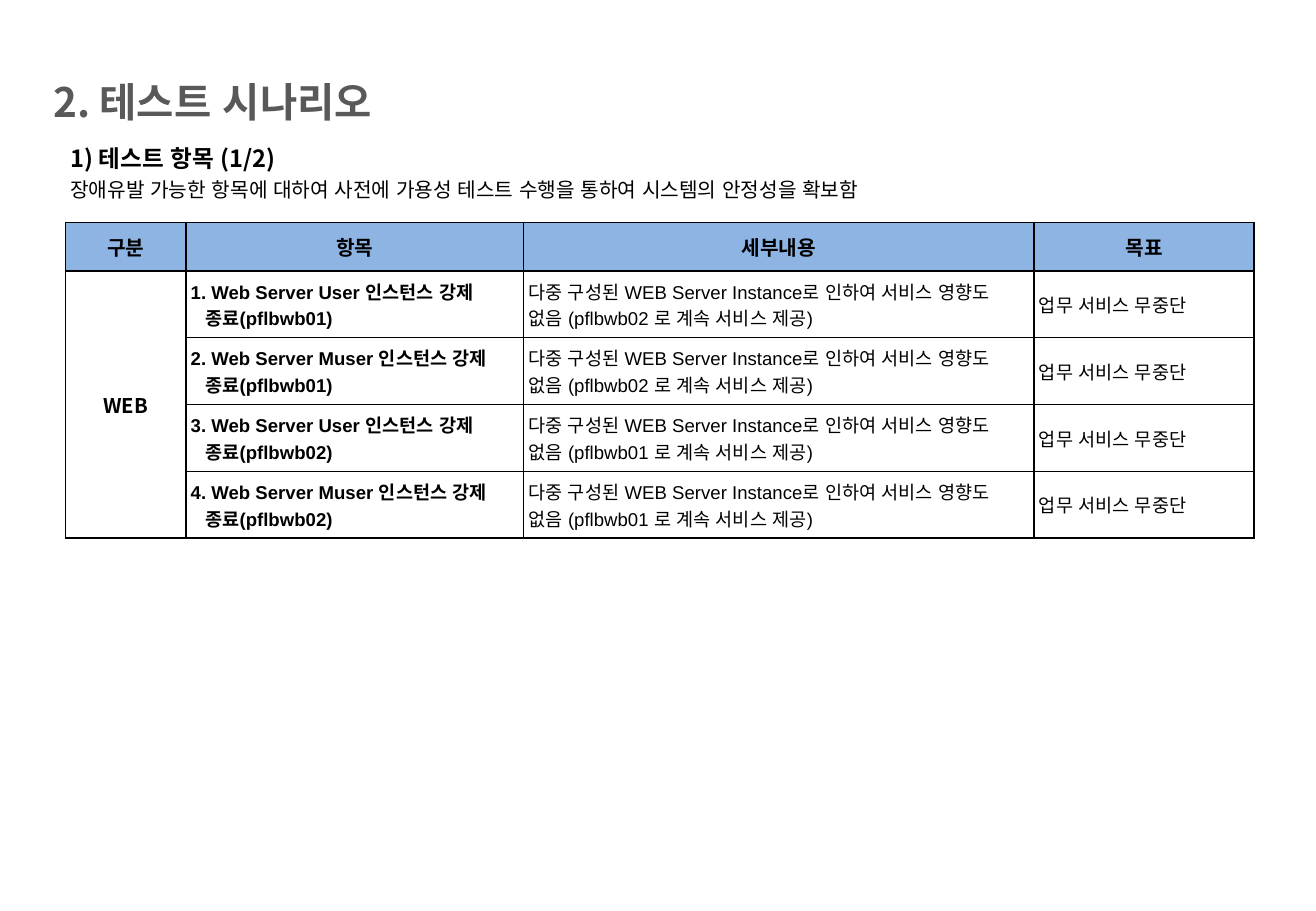
from pptx import Presentation
from pptx.dml.color import RGBColor
from pptx.enum.text import MSO_ANCHOR, MSO_AUTO_SIZE, PP_ALIGN
from pptx.oxml.ns import qn
from pptx.util import Inches, Pt
from lxml import etree

LEFT, CENTER = PP_ALIGN.LEFT, PP_ALIGN.CENTER
TOP, MIDDLE = MSO_ANCHOR.TOP, MSO_ANCHOR.MIDDLE
NO_AUTOFIT = MSO_AUTO_SIZE.NONE

TITLE = "2. 테스트 시나리오"
SUBTITLE = "1) 테스트 항목 (1/2)"
SUMMARY = "장애유발 가능한 항목에 대하여 사전에 가용성 테스트 수행을 통하여 시스템의 안정성을 확보함"
HEADERS = ["구분", "항목", "세부내용", "목표"]
CATEGORY = "WEB"
GOAL = "업무 서비스 무중단"
# (server account, stopped instance, instance that keeps serving)
TESTS = [
    ("User", "pflbwb01", "pflbwb02"),
    ("Muser", "pflbwb01", "pflbwb02"),
    ("User", "pflbwb02", "pflbwb01"),
    ("Muser", "pflbwb02", "pflbwb01"),
]

KOREAN, LATIN = "Noto Sans CJK KR", "Arial"
THEME = {
    "black": "000000", "white": "FFFFFF", "header": "8EB4E3",
    "title": {"size": 24, "bold": True, "name": KOREAN, "color": "595959"},
    "subtitle": {"size": 14, "bold": True, "name": KOREAN, "color": "000000"},
    "summary": {"size": 12, "bold": False, "name": KOREAN, "color": "000000"},
    "heading": {"size": 12, "bold": True, "name": KOREAN, "color": "000000"},
    "item": {"size": 11, "bold": True, "name": LATIN, "color": "000000"},
    "detail": {"size": 11, "bold": False, "name": LATIN, "color": "000000"},
}

COLUMN_WIDTHS = [0.99, 2.78, 4.2, 1.81]
HEADER_HEIGHT, TEST_HEIGHT = 0.4, 0.55
HANGING = 0.12


def write(paragraph, text, style, align=LEFT):
    """Add the text in a theme style, with a line break at each newline."""
    paragraph.alignment = align
    look = THEME[style]
    for index, line in enumerate(text.split("\n")):
        if index:
            paragraph.add_line_break()
        run = paragraph.add_run()
        run.text = line
        run.font.color.rgb = RGBColor.from_string(look["color"])
        for key, value in {"size": Pt(look["size"]), "bold": look["bold"], "name": look["name"]}.items():
            setattr(run.font, key, value)
        properties = run.font._element
        for key, value in {"lang": "ko-KR", "kern": "0"}.items():
            properties.set(key, value)
        properties.find(qn("a:latin")).addnext(etree.Element(qn("a:ea"), typeface=KOREAN))


def set_margins(target, sides, ends):
    for side, inset in zip(("left", "top", "right", "bottom"), (sides, ends) * 2):
        setattr(target, f"margin_{side}", Inches(inset))


def draw_borders(cell):
    properties = cell._tc.get_or_add_tcPr()
    for edge in ("lnL", "lnR", "lnT", "lnB"):
        line = etree.SubElement(properties, qn(f"a:{edge}"), w=str(Pt(1)))
        fill = etree.SubElement(line, qn("a:solidFill"))
        etree.SubElement(fill, qn("a:srgbClr"), val=THEME["black"])


def add_title(slide):
    title = slide.shapes.title
    title.left, title.top, title.width, title.height = map(Inches, (0.34, 0.28, 8.06, 0.73))
    frame = title.text_frame
    set_margins(frame, 0.1, 0.05)
    frame.margin_top = Inches(0.35)
    frame.margin_bottom = 0
    frame.auto_size, frame.vertical_anchor = NO_AUTOFIT, TOP
    write(frame.paragraphs[0], TITLE, "title")


def add_introduction(slide):
    frame = slide.shapes.add_textbox(*map(Inches, (0.48, 1.09, 10.24, 0.63))).text_frame
    frame.word_wrap = True
    write(frame.paragraphs[0], SUBTITLE, "subtitle")
    write(frame.add_paragraph(), SUMMARY, "summary")
    for paragraph in frame.paragraphs:
        paragraph.line_spacing = 1.2


def fill_cell(cell, text, style, align=LEFT, is_header=False):
    cell.vertical_anchor = MIDDLE
    set_margins(cell, *((0.1, 0.05) if is_header else (0.04, 0.04)))
    cell.fill.solid()
    cell.fill.fore_color.rgb = RGBColor.from_string(THEME["header" if is_header else "white"])
    write(cell.text_frame.paragraphs[0], text, style, align)


def add_test_table(slide):
    heights = [HEADER_HEIGHT] + [TEST_HEIGHT] * len(TESTS)
    size = (0.54, 1.83, sum(COLUMN_WIDTHS), sum(heights))
    table = slide.shapes.add_table(len(heights), len(HEADERS), *map(Inches, size)).table
    table.first_row = table.horz_banding = False
    for column, width in zip(table.columns, COLUMN_WIDTHS):
        column.width = Inches(width)
    for row, height in zip(table.rows, heights):
        row.height = Inches(height)
    for cell in table.iter_cells():
        draw_borders(cell)

    for column, header in enumerate(HEADERS):
        fill_cell(table.cell(0, column), header, "heading", CENTER, is_header=True)
    table.cell(1, 0).merge(table.cell(len(TESTS), 0))
    fill_cell(table.cell(1, 0), CATEGORY, "heading", CENTER)

    for number, (account, stopped, serving) in enumerate(TESTS, 1):
        item = table.cell(number, 1)
        fill_cell(item, f"{number}. Web Server {account} 인스턴스 강제\n종료({stopped})", "item")
        indent = item.text_frame.paragraphs[0]._p.get_or_add_pPr()
        indent.set("marL", str(Inches(HANGING)))
        indent.set("indent", str(-Inches(HANGING)))
        detail = f"다중 구성된 WEB Server Instance로 인하여 서비스 영향도 없음 ({serving} 로 계속 서비스 제공)"
        fill_cell(table.cell(number, 2), detail, "detail")
        fill_cell(table.cell(number, 3), GOAL, "detail")


def main():
    deck = Presentation()
    deck.slide_width, deck.slide_height = Inches(10.83), Inches(7.5)
    slide = deck.slides.add_slide(deck.slide_layouts[5])
    add_title(slide)
    add_introduction(slide)
    add_test_table(slide)
    deck.save("out.pptx")


if __name__ == "__main__":
    main()
